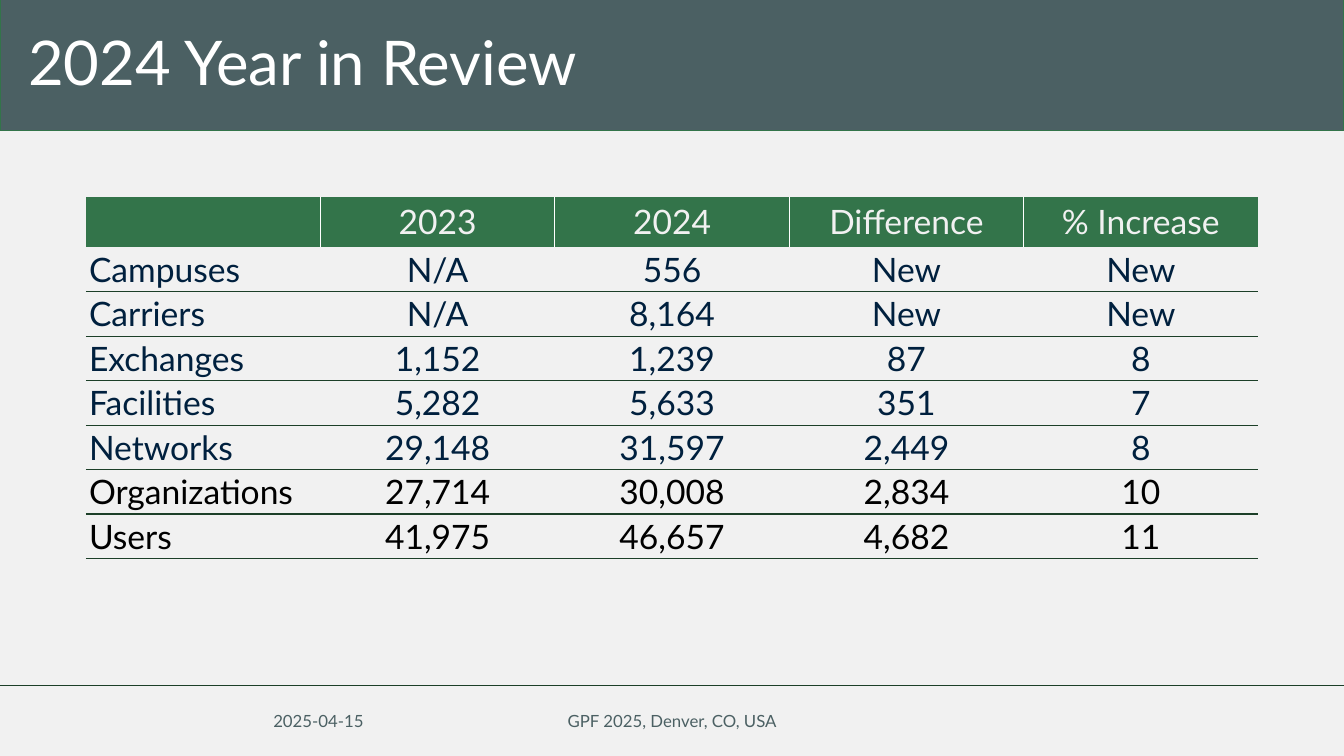
from typing import NamedTuple

from lxml import etree
from pptx import Presentation
from pptx import util as u
from pptx.dml import color
from pptx.enum import shapes, text
from pptx.oxml import ns

WIDE, HIGH = 960, 540
SLATE, GREEN, DARK = "4B6063", "33744A", "1C3F28"
PALE, WHITE, NAVY, BLACK = "F1F1F1", "FFFFFF", "00203E", "000000"
LEFT, MID = text.PP_ALIGN.LEFT, text.PP_ALIGN.CENTER
NO_GRID = "{2D5ABB26-0587-4C30-8999-92F81FD0307C}"


class Label(NamedTuple):
    words: str
    left: float
    top: float
    width: float
    height: float
    size: float
    tint: str
    align: text.PP_ALIGN
    pitch: float = 1.0


class Row(NamedTuple):
    cells: tuple[str, ...]
    tint: str = NAVY


LABELS = [
    Label("2024 Year in Review", 13, 7.2, 934.5, 79.2, 44, WHITE, LEFT, 0.9),
    Label("2025-04-15", 173.5, 500.4, 108, 28.8, 12, SLATE, MID),
    Label("GPF 2025, Denver, CO, USA", 318.2, 500.4, 324, 28.8, 12, SLATE, MID),
]
ROWS = [
    Row(("", "2023", "2024", "Difference", "% Increase"), PALE),
    Row(("Campuses", "N/A", "556", "New", "New")),
    Row(("Carriers", "N/A", "8,164", "New", "New")),
    Row(("Exchanges", "1,152", "1,239", "87", "8")),
    Row(("Facilities", "5,282", "5,633", "351", "7")),
    Row(("Networks", "29,148", "31,597", "2,449", "8")),
    Row(("Organizations", "27,714", "30,008", "2,834", "10"), BLACK),
    Row(("Users", "41,975", "46,657", "4,682", "11"), BLACK),
]
HEAD, BODY = 36, 31.8  # row heights
COL = 167.45


def rgb(code: str) -> color.RGBColor:
    return color.RGBColor.from_string(code)


def apply(thing, form: dict) -> None:
    for name, value in form.items():
        setattr(thing, name, value)


def style(par, words: str, size: float, tint: str, align, pitch: float = 1.0) -> None:
    run = par.add_run()
    run.text = words
    apply(par, {"alignment": align, "line_spacing": pitch})
    apply(run.font, {"name": "Lato", "size": u.Pt(size)})
    run.font.color.rgb = rgb(tint)


def write(slide, label: Label) -> None:
    box = slide.shapes.add_textbox(*map(u.Pt, label[1:5]))
    apply(box.text_frame, {"word_wrap": True,
                           "vertical_anchor": text.MSO_ANCHOR.MIDDLE})
    style(box.text_frame.paragraphs[0], label.words, label.size,
          label.tint, label.align, label.pitch)


def edge(cell, side: str, tint: str) -> None:
    props = cell._tc.get_or_add_tcPr()
    line = etree.SubElement(props, ns.qn(f"a:ln{side}"), w=str(u.Pt(1)))
    fill = etree.SubElement(line, ns.qn("a:solidFill"))
    etree.SubElement(fill, ns.qn("a:srgbClr"), val=tint)


def frame(slide) -> None:
    # Title band
    band = slide.shapes.add_shape(shapes.MSO_SHAPE.RECTANGLE, 0, 0,
                                  u.Pt(WIDE), u.Pt(93.6))
    band.shadow.inherit = False
    band.fill.solid()
    band.fill.fore_color.rgb = rgb(SLATE)
    band.line.color.rgb = rgb(GREEN)
    band.line.width = u.Pt(0.75)
    # Footer rule
    rule = slide.shapes.add_connector(shapes.MSO_CONNECTOR.STRAIGHT, 0,
                                      u.Pt(489.6), u.Pt(WIDE), u.Pt(489.6))
    rule.line.color.rgb = rgb(DARK)
    rule.line.width = u.Pt(1)
    etree.SubElement(rule.element.spPr, ns.qn("a:effectLst"))


def tabulate(slide, rows: list[Row]) -> None:
    count = len(rows[0].cells)
    tall = HEAD + BODY * (len(rows) - 1)
    holder = slide.shapes.add_table(len(rows), count, u.Pt(61.4), u.Pt(140.5),
                                    u.Pt(COL * count), u.Pt(tall))
    holder.element.xpath(".//a:tableStyleId")[0].text = NO_GRID
    table = holder.table
    table.horz_banding = False
    for col in table.columns:
        col.width = u.Pt(COL)
    for i, row in enumerate(rows):
        head = i == 0
        table.rows[i].height = u.Pt(HEAD if head else BODY)
        side, rise = (3.6, 3.6) if head else (2.2, 1.5)
        anchor = text.MSO_ANCHOR.MIDDLE if head else text.MSO_ANCHOR.BOTTOM
        form = {"margin_left": u.Pt(side), "margin_right": u.Pt(side),
                "margin_top": u.Pt(rise), "margin_bottom": u.Pt(rise),
                "vertical_anchor": anchor}
        for j, words in enumerate(row.cells):
            cell = table.cell(i, j)
            apply(cell, form)
            # White dividers in the header, dark rules below each body row
            if head:
                if j > 0:
                    edge(cell, "L", WHITE)
                if j < count - 1:
                    edge(cell, "R", WHITE)
                cell.fill.solid()
                cell.fill.fore_color.rgb = rgb(GREEN)
            else:
                edge(cell, "B", DARK)
                cell.fill.background()
            if words:
                style(cell.text_frame.paragraphs[0], words, 24, row.tint,
                      MID if j else LEFT)


def main() -> None:
    deck = Presentation()
    apply(deck, {"slide_width": u.Pt(WIDE), "slide_height": u.Pt(HIGH)})
    slide = deck.slides.add_slide(deck.slide_layouts[6])
    slide.background.fill.solid()
    slide.background.fill.fore_color.rgb = rgb(PALE)
    frame(slide)
    for label in LABELS:
        write(slide, label)
    tabulate(slide, ROWS)
    deck.save("out.pptx")


if __name__ == "__main__":
    main()
